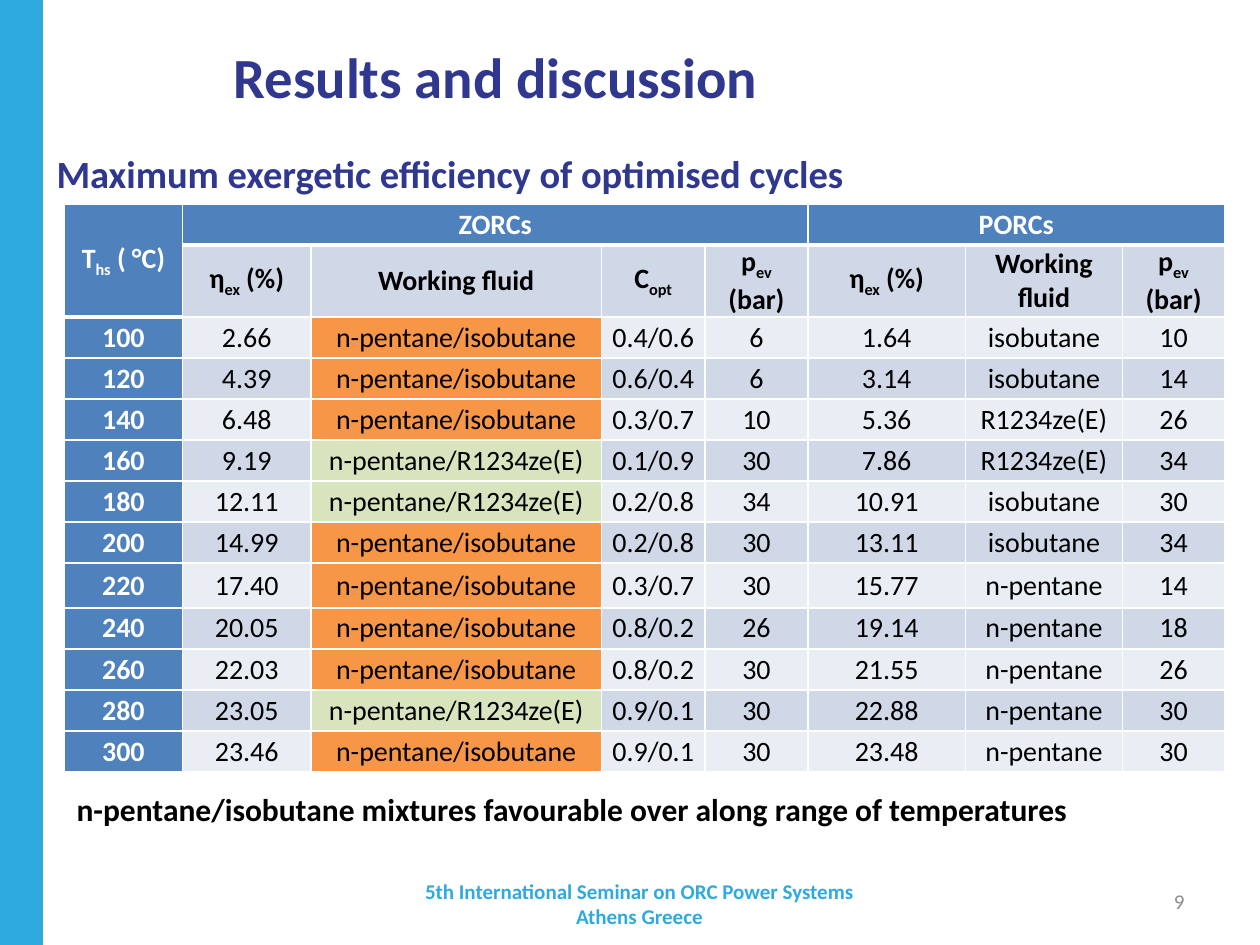
import pptx
import pptx.dml.color
import pptx.enum.shapes
import pptx.enum.text
import pptx.oxml.ns
import pptx.util
from lxml import etree

Inches = pptx.util.Inches
Pt = pptx.util.Pt
RGBColor = pptx.dml.color.RGBColor
ALIGN = pptx.enum.text.PP_ALIGN
MIDDLE = pptx.enum.text.MSO_ANCHOR.MIDDLE
TOP = pptx.enum.text.MSO_ANCHOR.TOP

SKY = RGBColor(0x2F, 0xAA, 0xE1)
NAVY = RGBColor(0x2F, 0x38, 0x8E)
GREY = RGBColor(0x8C, 0x8C, 0x8C)
BLACK = RGBColor(0, 0, 0)
WHITE = RGBColor(0xFF, 0xFF, 0xFF)
HEADER_BLUE = RGBColor(0x4F, 0x81, 0xBD)
DARK_BAND = RGBColor(0xD0, 0xD8, 0xE8)
LIGHT_BAND = RGBColor(0xE9, 0xED, 0xF4)
FLUID_COLORS = {
    "n-pentane/isobutane": RGBColor(0xF7, 0x96, 0x46),
    "n-pentane/R1234ze(E)": RGBColor(0xD7, 0xE4, 0xBD),
}

COLUMN_WIDTHS = (0.94, 1.02, 2.31, 0.82, 0.82, 1.25, 1.25, 0.81)
ROW_HEIGHTS = (0.33, 0.56) + (0.33,) * 6 + (0.36,) + (0.33,) * 4
# Text between bars is subscript.
GROUPS = ("T|hs| ( °C)", "ZORCs", "", "", "", "PORCs", "", "")
QUANTITIES = ("", "η|ex| (%)", "Working fluid", "C|opt|", "p|ev| (bar)",
              "η|ex| (%)", "Working fluid", "p|ev| (bar)")
RESULTS = (
    ("100", "2.66", "n-pentane/isobutane", "0.4/0.6", "6", "1.64", "isobutane", "10"),
    ("120", "4.39", "n-pentane/isobutane", "0.6/0.4", "6", "3.14", "isobutane", "14"),
    ("140", "6.48", "n-pentane/isobutane", "0.3/0.7", "10", "5.36", "R1234ze(E)", "26"),
    ("160", "9.19", "n-pentane/R1234ze(E)", "0.1/0.9", "30", "7.86", "R1234ze(E)", "34"),
    ("180", "12.11", "n-pentane/R1234ze(E)", "0.2/0.8", "34", "10.91", "isobutane", "30"),
    ("200", "14.99", "n-pentane/isobutane", "0.2/0.8", "30", "13.11", "isobutane", "34"),
    ("220", "17.40", "n-pentane/isobutane", "0.3/0.7", "30", "15.77", "n-pentane", "14"),
    ("240", "20.05", "n-pentane/isobutane", "0.8/0.2", "26", "19.14", "n-pentane", "18"),
    ("260", "22.03", "n-pentane/isobutane", "0.8/0.2", "30", "21.55", "n-pentane", "26"),
    ("280", "23.05", "n-pentane/R1234ze(E)", "0.9/0.1", "30", "22.88", "n-pentane", "30"),
    ("300", "23.46", "n-pentane/isobutane", "0.9/0.1", "30", "23.48", "n-pentane", "30"),
)


def write_text(frame, text, size=16, color=BLACK, bold=True, align=ALIGN.LEFT,
               anchor=MIDDLE, after=0):
    """Fill a text frame: one paragraph a line, subscripts between bars."""
    frame.word_wrap = True
    frame.vertical_anchor = anchor
    for index, line in enumerate(text.split("\n")):
        paragraph = frame.add_paragraph() if index else frame.paragraphs[0]
        paragraph.alignment = align
        paragraph.space_before = Pt(0)
        paragraph.space_after = Pt(after)
        for part_index, part in enumerate(line.split("|")):
            if not part:
                continue
            run = paragraph.add_run()
            run.text = part
            run.font.name = "Calibri"
            run.font.size = Pt(size)
            run.font.bold = bold
            run.font.color.rgb = color
            if part_index % 2:
                run.font._element.set("baseline", "-25000")


def add_text(slide, left, top, width, height, text, **text_format):
    box = slide.shapes.add_textbox(left, top, width, height)
    write_text(box.text_frame, text, **text_format)


def add_side_band(slide, left, top, width, height):
    band = slide.shapes.add_shape(
        pptx.enum.shapes.MSO_SHAPE.RECTANGLE, left, top, width, height)
    band.shadow.inherit = False
    band.fill.solid()
    band.fill.fore_color.rgb = SKY
    band.line.fill.background()


def set_title(slide, left, top, width, height):
    title = slide.shapes.title
    title.left, title.top, title.width, title.height = left, top, width, height
    write_text(title.text_frame, "Results and discussion",
               size=32.4, color=NAVY, align=ALIGN.CENTER)


def set_borders(cell, **widths):
    """Draw white borders, given as L, R, T and B widths in points."""
    properties = cell._tc.get_or_add_tcPr()
    for side in "LRTB":
        line = etree.SubElement(properties, pptx.oxml.ns.qn(f"a:ln{side}"),
                                w=str(Pt(widths.get(side, 1))))
        fill = etree.SubElement(line, pptx.oxml.ns.qn("a:solidFill"))
        etree.SubElement(fill, pptx.oxml.ns.qn("a:srgbClr"), val=str(WHITE))


def format_cell(cell, text, row, column):
    is_header = row == 0 or column == 0
    fill = HEADER_BLUE if is_header else LIGHT_BAND if row % 2 == 0 else DARK_BAND
    heavy_row = 1 if column == 0 else 0
    set_borders(cell, B=3 if row <= heavy_row else 1,
                T=3 if row == heavy_row + 1 else 1)
    cell.fill.solid()
    cell.fill.fore_color.rgb = FLUID_COLORS.get(text, fill)
    cell.margin_left = cell.margin_right = Inches(0.07)
    cell.margin_top = cell.margin_bottom = 0
    no_space_after = column == 7 or (row == 0 and column > 0)
    write_text(cell.text_frame, text, color=WHITE if is_header else BLACK,
               bold=is_header or row == 1, align=ALIGN.CENTER,
               after=0 if no_space_after else 6)
    cell.vertical_anchor = MIDDLE


def add_results_table(slide, left, top, width, height):
    rows = (GROUPS, QUANTITIES) + RESULTS
    table = slide.shapes.add_table(
        len(rows), len(COLUMN_WIDTHS), left, top, width, height).table
    for column, share in zip(table.columns, COLUMN_WIDTHS):
        column.width = int(width * share / sum(COLUMN_WIDTHS))
    for row, share in zip(table.rows, ROW_HEIGHTS):
        row.height = int(height * share / sum(ROW_HEIGHTS))
    for row, texts in enumerate(rows):
        for column, text in enumerate(texts):
            format_cell(table.cell(row, column), text, row, column)
    for first, last in (((0, 0), (1, 0)), ((0, 1), (0, 4)), ((0, 5), (0, 7))):
        table.cell(*first).merge(table.cell(*last))


def add_footer(slide, left, top, width, height):
    add_text(slide, left, top, Inches(4.41), height,
             "5th International Seminar on ORC Power Systems\nAthens Greece",
             size=12, color=SKY, align=ALIGN.CENTER)
    number_width = Inches(0.56)
    add_text(slide, left + width - number_width, top - Inches(0.02),
             number_width, height, "9", size=12, color=GREY, bold=False,
             align=ALIGN.RIGHT)


def main():
    presentation = pptx.Presentation()
    presentation.slide_width = Inches(10)
    presentation.slide_height = Inches(7.5)
    slide = presentation.slides.add_slide(presentation.slide_layouts[5])
    add_side_band(slide, Inches(-0.01), 0, Inches(0.35), Inches(7.5))
    set_title(slide, Inches(0.51), Inches(0.3), Inches(6.85), Inches(0.61))
    add_footer(slide, Inches(2.87), Inches(6.97), Inches(6.63), Inches(0.4))
    add_text(slide, Inches(0.35), Inches(1.07), Inches(8.82), Inches(0.61),
             "Maximum exergetic efficiency of optimised cycles",
             size=22, color=NAVY)
    add_results_table(slide, Inches(0.51), Inches(1.62), Inches(9.21), Inches(4.49))
    add_text(slide, Inches(0.51), Inches(6.22), Inches(9.07), Inches(0.88),
             "n-pentane/isobutane mixtures favourable over along range of temperatures",
             size=18, anchor=TOP, after=12)
    presentation.save("out.pptx")


if __name__ == "__main__":
    main()
